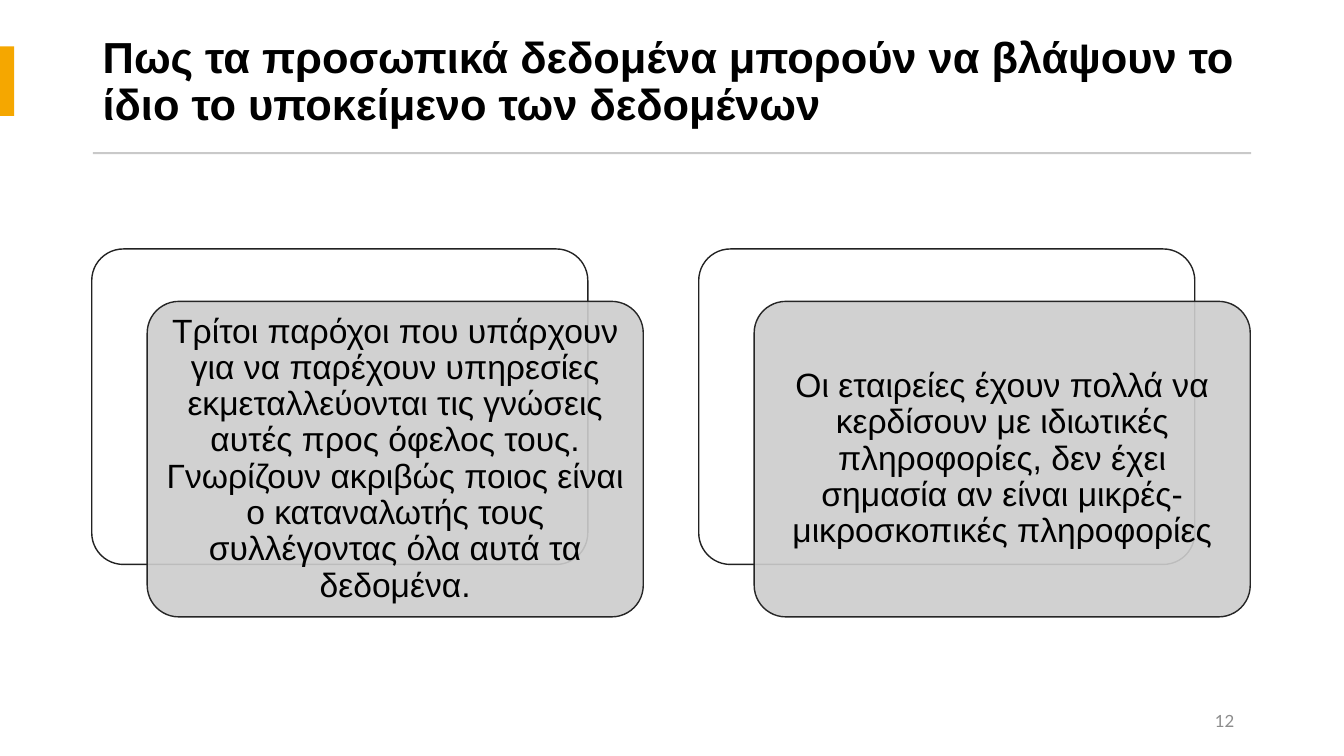
from dataclasses import dataclass

from lxml.etree import SubElement
from pptx import Presentation
from pptx.dml.color import RGBColor
from pptx.enum.shapes import MSO_SHAPE
from pptx.enum.text import MSO_ANCHOR, PP_ALIGN
from pptx.oxml.ns import qn
from pptx.util import Inches, Pt

COLORS = {
    "text": "000000",
    "accent": "F5A700",
    "rule": "C9C9C9",
    "back": "FFFFFF",
    "back_line": "222222",
    "front": "CDCDCD",
    "front_line": "262626",
    "number": "8C8C8C",
}


@dataclass
class Box:
    left: float
    top: float
    width: float
    height: float

    def emu(self) -> tuple:
        return tuple(Inches(v) for v in (self.left, self.top, self.width, self.height))


@dataclass
class Style:
    size: float
    font: str = "Arial"
    color: str = "text"
    bold: bool = False
    align: PP_ALIGN = PP_ALIGN.LEFT
    spacing: float = 0.9
    inset: tuple = (0.1, 0.05)


@dataclass
class Card:
    left: float
    text: str


def rgb(name: str) -> RGBColor:
    return RGBColor.from_string(COLORS[name])


def add_shape(s, kind: MSO_SHAPE, box: Box, fill: str, line: str = ""):
    sp = s.shapes.add_shape(kind, *box.emu())
    sp.shadow.inherit = False
    sp.fill.solid()
    sp.fill.fore_color.rgb = rgb(fill)
    if line:
        sp.line.color.rgb = rgb(line)
        sp.line.width = Pt(1)
    else:
        sp.line.fill.background()
    return sp


def add_text(s, box: Box, text: str, style: Style) -> None:
    tf = s.shapes.add_textbox(*box.emu()).text_frame
    tf.word_wrap = True
    tf.vertical_anchor = MSO_ANCHOR.MIDDLE
    tf.margin_left = tf.margin_right = Inches(style.inset[0])
    tf.margin_top = tf.margin_bottom = Inches(style.inset[1])
    p = tf.paragraphs[0]
    p.alignment = style.align
    p.line_spacing = style.spacing
    r = p.add_run()
    r.text = text
    r.font.name = style.font
    r.font.size = Pt(style.size)
    r.font.bold = style.bold
    r.font.color.rgb = rgb(style.color)


def add_card(s, card: Card) -> None:
    back = Box(card.left, 2.47, 4.92, 3.13)
    front = Box(card.left + 0.55, 2.99, back.width, back.height)
    pad = 0.09
    inner = Box(front.left + pad, front.top + pad,
                front.width - 2 * pad, front.height - 2 * pad)
    for box, name in ((back, "back"), (front, "front")):
        sp = add_shape(s, MSO_SHAPE.ROUNDED_RECTANGLE, box, name, f"{name}_line")
        sp.adjustments[0] = 0.1
    # Front panel lets the back outline show through
    color = sp.fill._xPr.find(qn("a:solidFill"))[0]
    SubElement(color, qn("a:alpha")).set("val", "90000")
    add_text(s, inner, card.text,
             Style(24, align=PP_ALIGN.CENTER, inset=(0.1, 0.1)))


CARDS = [
    Card(0.91, "Τρίτοι παρόχοι που υπάρχουν για να παρέχουν υπηρεσίες "
               "εκμεταλλεύονται τις γνώσεις αυτές προς όφελος τους. "
               "Γνωρίζουν ακριβώς ποιος είναι ο καταναλωτής τους "
               "συλλέγοντας όλα αυτά τα δεδομένα."),
    Card(6.93, "Οι εταιρείες έχουν πολλά να κερδίσουν με ιδιωτικές "
               "πληροφορίες, δεν έχει σημασία αν είναι "
               "μικρές-μικροσκοπικές πληροφορίες"),
]


def main() -> None:
    prs = Presentation()
    prs.slide_width, prs.slide_height = Inches(13.33), Inches(7.5)
    s = prs.slides.add_slide(prs.slide_layouts[6])

    # Title with accent tab and rule
    add_text(s, Box(0.92, 0.27, 11.49, 1.1),
             "Πως τα προσωπικά δεδομένα μπορούν να βλάψουν το ίδιο "
             "το υποκείμενο των δεδομένων", Style(31, bold=True))
    add_shape(s, MSO_SHAPE.RECTANGLE, Box(0, 0.46, 0.14, 0.69), "accent")
    add_shape(s, MSO_SHAPE.RECTANGLE, Box(0.92, 1.51, 11.49, 0.02), "rule")

    # Layered cards
    for card in CARDS:
        add_card(s, card)

    # Slide number
    add_text(s, Box(9.34, 6.95, 3, 0.4), "12",
             Style(12, "Lato", "number", align=PP_ALIGN.RIGHT, spacing=1.0))

    prs.save("out.pptx")


if __name__ == "__main__":
    main()
